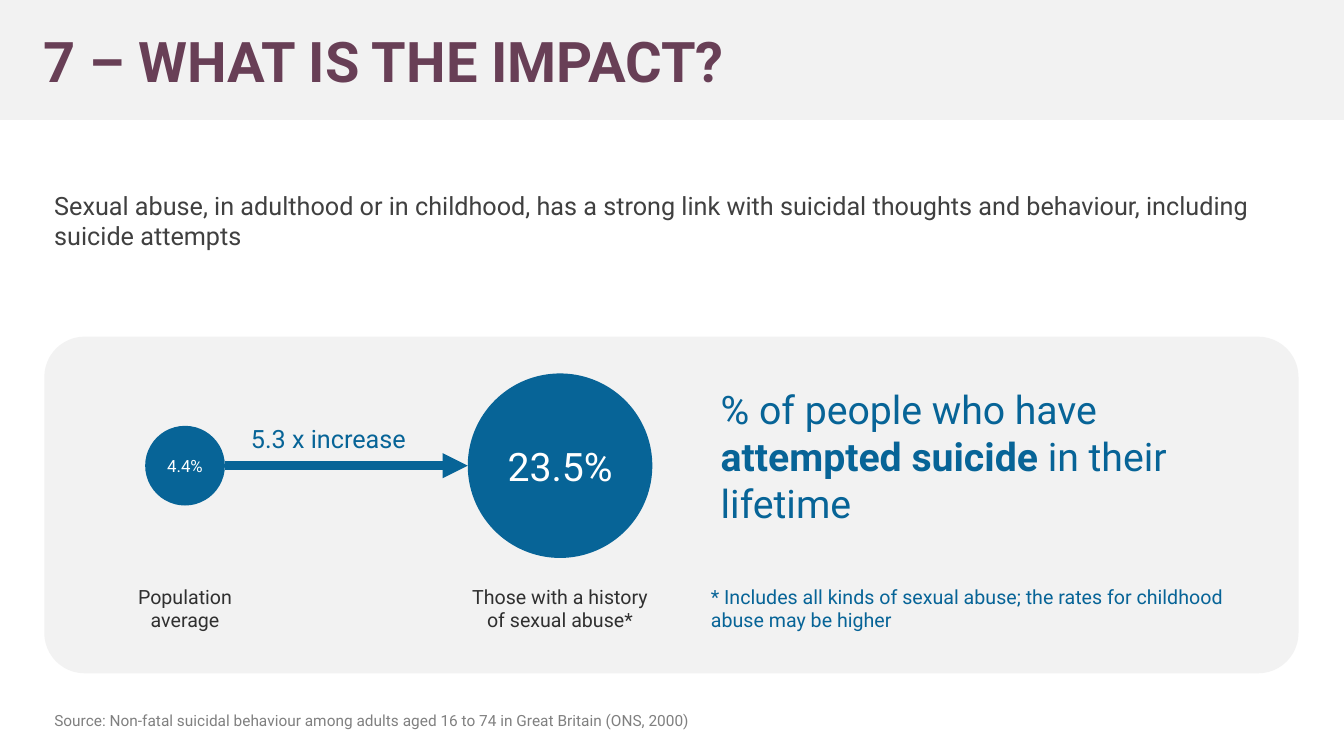
from lxml import etree
from pptx import Presentation
from pptx.dml.color import RGBColor
from pptx.enum.shapes import MSO_CONNECTOR, MSO_SHAPE
from pptx.enum.text import MSO_ANCHOR, PP_ALIGN
from pptx.oxml.ns import qn
from pptx.util import Inches, Pt

RECTANGLE, ROUNDED, OVAL = MSO_SHAPE.RECTANGLE, MSO_SHAPE.ROUNDED_RECTANGLE, MSO_SHAPE.OVAL
STRAIGHT = MSO_CONNECTOR.STRAIGHT
MIDDLE = MSO_ANCHOR.MIDDLE
LEFT, CENTER = PP_ALIGN.LEFT, PP_ALIGN.CENTER

WIDTH, HEIGHT = Inches(13.33), Inches(7.5)
FONT = "Roboto"
COLORS = {
    "panel": "F2F2F2",
    "title": "683F56",
    "accent": "076497",
    "body": "404040",
    "caption": "303030",
    "source": "808080",
    "white": "FFFFFF",
}


def color(name):
    return RGBColor.from_string(COLORS[name])


class SlideBuilder:
    """Draws on one slide; lengths are percentages of its width and height."""

    def __init__(self, slide):
        self.slide = slide

    def box(self, left, top, width, height):
        return (round(WIDTH * left / 100), round(HEIGHT * top / 100),
                round(WIDTH * width / 100), round(HEIGHT * height / 100))

    def add_runs(self, text_frame, runs, size, color_name, align=LEFT):
        """Fill the first paragraph with (text, bold) runs."""
        paragraph = text_frame.paragraphs[0]
        paragraph.alignment = align
        for text, bold in runs:
            run = paragraph.add_run()
            run.text = text
            run.font.name = FONT
            run.font.size = Pt(size)
            run.font.bold = bold
            run.font.color.rgb = color(color_name)

    def shape(self, kind, bounds, fill):
        shape = self.slide.shapes.add_shape(kind, *self.box(*bounds))
        shape.shadow.inherit = False
        shape.fill.solid()
        shape.fill.fore_color.rgb = color(fill)
        shape.line.fill.background()
        return shape

    def title_band(self, text, height):
        text_frame = self.shape(RECTANGLE, (0, 0, 100, height), "panel").text_frame
        text_frame.vertical_anchor = MIDDLE
        text_frame.margin_left = Inches(0.43)
        self.add_runs(text_frame, [(text, True)], 40, "title")

    def panel(self, bounds, corner):
        self.shape(ROUNDED, bounds, "panel").adjustments[0] = corner

    def circle(self, center_x, center_y, diameter, text, size):
        """Draw a labelled circle whose diameter is a share of the width."""
        tall = diameter * WIDTH / HEIGHT
        bounds = (center_x - diameter / 2, center_y - tall / 2, diameter, tall)
        text_frame = self.shape(OVAL, bounds, "accent").text_frame
        text_frame.word_wrap = False
        text_frame.vertical_anchor = MIDDLE
        self.add_runs(text_frame, [(text, False)], size, "white", CENTER)

    def arrow(self, start_x, end_x, y):
        connector = self.slide.shapes.add_connector(
            STRAIGHT, *self.box(start_x, y, end_x, y))
        connector.line.color.rgb = color("accent")
        connector.line.width = Pt(6)
        properties = connector._element.spPr
        line = properties.find(qn("a:ln"))
        etree.SubElement(line, qn("a:tailEnd"), type="triangle")
        etree.SubElement(properties, qn("a:effectLst"))

    def text(self, bounds, runs, size, color_name, align=LEFT, side_margin=0.1):
        text_frame = self.slide.shapes.add_textbox(*self.box(*bounds)).text_frame
        text_frame.word_wrap = True
        text_frame.margin_left = text_frame.margin_right = Inches(side_margin)
        self.add_runs(text_frame, runs, size, color_name, align)


def main():
    presentation = Presentation()
    presentation.slide_width, presentation.slide_height = WIDTH, HEIGHT
    builder = SlideBuilder(presentation.slides.add_slide(presentation.slide_layouts[6]))

    margin, content_width = 3.3, 93.32
    average_x, history_x, circles_y = 13.77, 41.67, 61.6
    average_size, history_size = 5.93, 13.73
    note_left, caption_top, caption_height = 52.89, 76.67, 7.6
    average_caption_width = 8.93

    builder.panel((margin, 44.53, content_width, 44.53), 0.12)
    builder.title_band("7 – WHAT IS THE IMPACT?", 15.87)
    builder.text((margin, 24.53, content_width, 17.47), [(
        "Sexual abuse, in adulthood or in childhood, has a strong link with suicidal "
        "thoughts and behaviour, including suicide attempts", False)], 18, "body")

    builder.circle(history_x, circles_y, history_size, "23.5%", 28)
    builder.circle(average_x, circles_y, average_size, "4.4%", 12)
    builder.arrow(average_x + average_size / 2, history_x - history_size / 2, circles_y)
    builder.text((17.93, 55.33, 15.15, 5.33), [("5.3 x increase", False)], 18, "accent")

    builder.text((note_left, 50.27, 40.51, 32.8), [
        ("% of people who have ", False),
        ("attempted suicide ", True),
        ("in their lifetime", False)], 28, "accent")

    captions = [
        (average_x - average_caption_width / 2, average_caption_width,
         "Population average", "caption", CENTER, 0.1),
        (history_x - history_size / 2, history_size,
         "Those with a history of sexual abuse*", "caption", CENTER, 0),
        (note_left, 41.79,
         "* Includes all kinds of sexual abuse; the rates for childhood abuse may be higher",
         "accent", LEFT, 0),
    ]
    for left, width, text, color_name, align, side_margin in captions:
        builder.text((left, caption_top, width, caption_height), [(text, False)],
                     14, color_name, align, side_margin)

    builder.text((margin, 93.47, 56.94, 3.87), [(
        "Source: Non-fatal suicidal behaviour among adults aged 16 to 74 "
        "in Great Britain (ONS, 2000)", False)], 11, "source")
    presentation.save("out.pptx")


if __name__ == "__main__":
    main()
